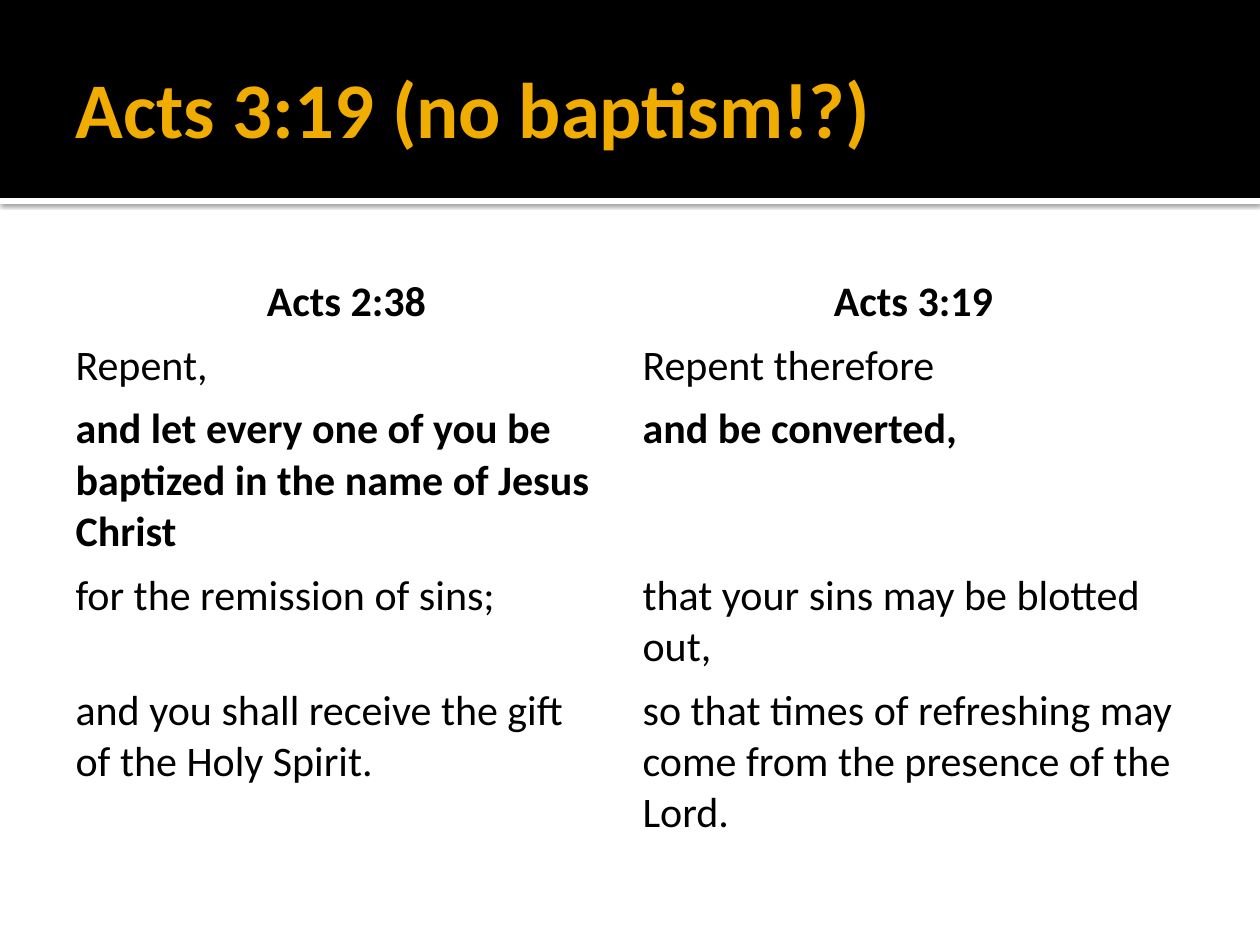
import pptx
import pptx.dml.color
import pptx.enum.shapes
import pptx.enum.text
import pptx.oxml
import pptx.oxml.ns
import pptx.util

COLORS = {"band": "000000", "paper": "FFFFFF", "title": "F0AD00", "text": "000000"}
EMU_PER_PX = 914400 / 126
SLIDE_WIDTH, SLIDE_HEIGHT = 1260, 945
BAND_HEIGHT = 198

VERSES = [
    ("Acts 2:38", "Acts 3:19"),
    ("Repent,", "Repent therefore"),
    ("and let every one of you be baptized in the name of Jesus Christ",
     "and be converted,"),
    ("for the remission of sins;", "that your sins may be blotted out,"),
    ("and you shall receive the gift\nof the Holy Spirit.",
     "so that times of refreshing may come from the presence of the Lord."),
]
VERSE_HEIGHTS = [62, 62, 154, 107, 154]
BOLD_VERSES = {0, 2}


def px(length):
    return pptx.util.Emu(round(length * EMU_PER_PX))


def rgb(name):
    return pptx.dml.color.RGBColor.from_string(COLORS[name])


class Deck:
    font = "Calibri"

    def __init__(self):
        self.presentation = pptx.Presentation()
        self.presentation.slide_width = px(SLIDE_WIDTH)
        self.presentation.slide_height = px(SLIDE_HEIGHT)
        self.slide = self.presentation.slides.add_slide(
            self.presentation.slide_layouts.get_by_name("Title Only"))
        background = self.slide.background.fill
        background.solid()
        background.fore_color.rgb = rgb("paper")

    def styled_text(self, paragraph, text, size, color, bold, align):
        paragraph.text = text
        paragraph.alignment = align
        for run in paragraph.runs:
            run.font.name = self.font
            run.font.size = pptx.util.Pt(size)
            run.font.bold = bold
            run.font.color.rgb = rgb(color)

    def bar(self, top, height, color, shadowed=False):
        bar = self.slide.shapes.add_shape(
            pptx.enum.shapes.MSO_SHAPE.RECTANGLE, 0, px(top), px(SLIDE_WIDTH), px(height))
        bar.fill.solid()
        bar.fill.fore_color.rgb = rgb(color)
        bar.line.fill.background()
        bar.shadow.inherit = False
        if shadowed:
            effects = bar.element.spPr.find(pptx.oxml.ns.qn("a:effectLst"))
            effects.append(pptx.oxml.parse_xml(
                f'<a:outerShdw {pptx.oxml.ns.nsdecls("a")} blurRad="31750" dist="10160" '
                f'dir="5400000" algn="tl" rotWithShape="0"><a:srgbClr val="{COLORS["band"]}">'
                '<a:alpha val="60000"/></a:srgbClr></a:outerShdw>'))

    def title(self, text, left, top, width, height):
        title = self.slide.shapes.title
        title.left, title.top, title.width, title.height = map(px, (left, top, width, height))
        frame = title.text_frame
        frame.word_wrap = True
        frame.auto_size = pptx.enum.text.MSO_AUTO_SIZE.NONE
        frame.vertical_anchor = pptx.enum.text.MSO_ANCHOR.MIDDLE
        frame.margin_left = px(13)
        frame.margin_right = frame.margin_top = frame.margin_bottom = px(6)
        self.styled_text(frame.paragraphs[0], text, 45, "title", True,
                         pptx.enum.text.PP_ALIGN.LEFT)
        title.element.getparent().append(title.element)

    def comparison(self, verses, heights, left, top, width):
        table = self.slide.shapes.add_table(
            len(verses), len(verses[0]), px(left), px(top), px(width), px(sum(heights))).table
        table.first_row = table.horz_banding = False
        for row, (passages, height) in enumerate(zip(verses, heights)):
            table.rows[row].height = px(height)
            align = pptx.enum.text.PP_ALIGN.LEFT if row else pptx.enum.text.PP_ALIGN.CENTER
            for column, passage in enumerate(passages):
                cell = table.cell(row, column)
                cell.fill.background()
                self.styled_text(cell.text_frame.paragraphs[0], passage, 24, "text",
                                 row in BOLD_VERSES, align)


def main():
    deck = Deck()
    deck.bar(BAND_HEIGHT, 6, "paper", shadowed=True)
    deck.bar(0, BAND_HEIGHT, "band")
    deck.title("Acts 3:19 (no baptism!?)", 63, 21, 1134, 173)
    deck.comparison(VERSES, VERSE_HEIGHTS, 63, 270, 1134)
    deck.presentation.save("out.pptx")


if __name__ == "__main__":
    main()
